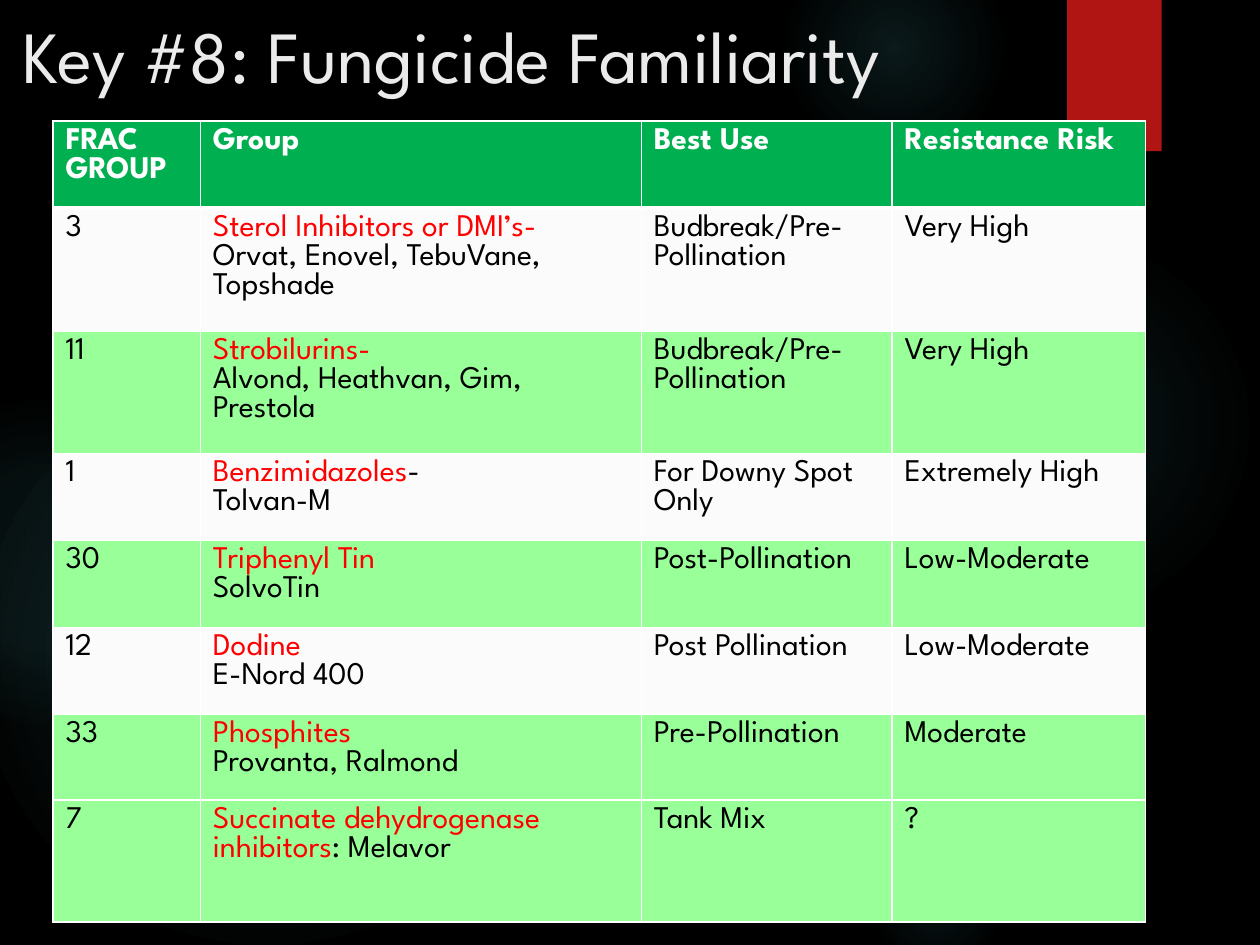
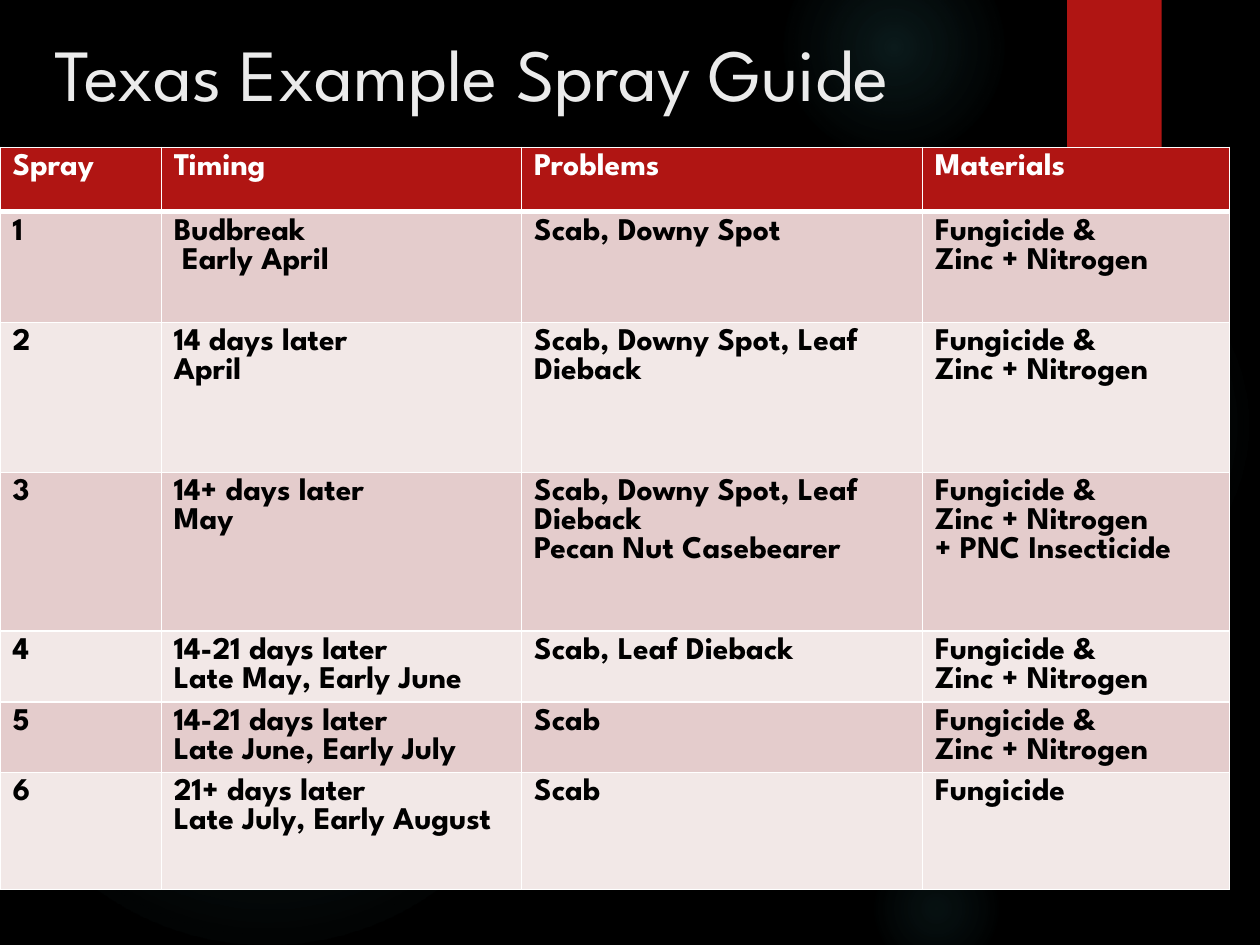
from lxml import etree
from pptx import Presentation
from pptx.dml.color import RGBColor
from pptx.enum.shapes import MSO_SHAPE as Preset
from pptx.enum.text import MSO_ANCHOR as Anchor, PP_ALIGN as Align
from pptx.oxml import parse_xml
from pptx.oxml.ns import nsdecls, qn
from pptx.util import Inches, Pt

# Shared style
FONT = "League Spartan"
TITLE_SIZE, CELL_SIZE = 42, 18
THIN, THICK = 1, 3
TITLE_ONLY = 5
BLACK = RGBColor(0x00, 0x00, 0x00)
WHITE = RGBColor(0xFF, 0xFF, 0xFF)
TITLE_GREY = RGBColor(0xEB, 0xEB, 0xEB)
BAND_RED = RGBColor(0xB0, 0x15, 0x13)
GROUP_RED = RGBColor(0xFF, 0x00, 0x00)
GLOW_TEAL = RGBColor(0x50, 0xB9, 0xC1)
HEADER_GREEN = RGBColor(0x00, 0xB0, 0x50)
ROW_GREEN = RGBColor(0x99, 0xFF, 0x99)
ROW_WHITE = RGBColor(0xFB, 0xFB, 0xFB)
ROW_ROSE = RGBColor(0xE4, 0xCC, 0xCC)
ROW_PINK = RGBColor(0xF2, 0xE8, 0xE7)

# Background glows: left, top, diameter, then (position %, opacity %) stops
GLOWS = [
    (6.89, 1.83, 3.08, [(0, 7), (36, 6), (69, 0)]),
    (6.22, -0.5, 1.75, [(0, 14), (36, 7), (73, 0)]),
    (6.89, 6.67, 1.08, [(0, 9), (36, 5), (66, 0)]),
    (-0.17, 2.92, 4.58, [(0, 11), (36, 10), (75, 0)]),
    (-0.92, 3.17, 2.58, [(0, 8), (36, 8), (72, 0)]),
]
BAND_BOX = (8.47, 0, 0.75, 1.2)

# Table rows: height, fill, cell texts. In a text, a line break starts a
# paragraph, and a bar ends the red group name that opens it.
FUNGICIDE_ROWS = [
    (0.69, HEADER_GREEN, ["FRAC GROUP", "Group", "Best Use", "Resistance Risk"]),
    (0.98, ROW_WHITE, ["3", "Sterol Inhibitors or DMI’s-|\nOrvat, Enovel, TebuVane, Topshade",
                       "Budbreak/Pre-Pollination", "Very High"]),
    (0.97, ROW_GREEN, ["11", "Strobilurins-|\nAlvond, Heathvan, Gim, Prestola",
                       "Budbreak/Pre-Pollination", "Very High"]),
    (0.69, ROW_WHITE, ["1", "Benzimidazoles|-\nTolvan-M",
                       "For Downy Spot Only", "Extremely High"]),
    (0.69, ROW_GREEN, ["30", "Triphenyl Tin|\nSolvoTin",
                       "Post-Pollination", "Low-Moderate"]),
    (0.69, ROW_WHITE, ["12", "Dodine|\nE-Nord 400",
                       "Post Pollination", "Low-Moderate"]),
    (0.68, ROW_GREEN, ["33", "Phosphites|\nProvanta, Ralmond",
                       "Pre-Pollination", "Moderate"]),
    (0.97, ROW_GREEN, ["7", "Succinate dehydrogenase inhibitors|: Melavor",
                       "Tank Mix", "?"]),
]
FEED = "Fungicide &\nZinc + Nitrogen"
SPRAY_ROWS = [
    (0.51, BAND_RED, ["Spray", "Timing", "Problems", "Materials"]),
    (0.88, ROW_ROSE, ["1", "Budbreak\n Early April", "Scab, Downy Spot", FEED]),
    (1.19, ROW_PINK, ["2", "14 days later\nApril",
                      "Scab, Downy Spot, Leaf Dieback", FEED]),
    (1.26, ROW_ROSE, ["3", "14+ days later\nMay",
                      "Scab, Downy Spot, Leaf Dieback\nPecan Nut Casebearer",
                      FEED + "\n+ PNC Insecticide"]),
    (0.56, ROW_PINK, ["4", "14-21 days later\nLate May, Early June",
                      "Scab, Leaf Dieback", FEED]),
    (0.56, ROW_ROSE, ["5", "14-21 days later\nLate June, Early July", "Scab", FEED]),
    (0.93, ROW_PINK, ["6", "21+ days later\nLate July, Early August",
                      "Scab", "Fungicide"]),
]


def inches(box):
    return [Inches(length) for length in box]


def paint(fill, color):
    fill.solid()
    fill.fore_color.rgb = color


def style_run(run, size, color, bold=False):
    run.font.name = FONT
    run.font.size = Pt(size)
    run.font.color.rgb = color
    run.font.bold = bold


# Backdrop
def add_plain_shape(slide, preset, box):
    shape = slide.shapes.add_shape(preset, *inches(box))
    shape.shadow.inherit = False
    shape.line.fill.background()
    return shape


def add_glow(slide, box, stops):
    glow = add_plain_shape(slide, Preset.OVAL, box)
    stop_xml = "".join(
        f'<a:gs pos="{position * 1000}"><a:srgbClr val="{GLOW_TEAL}">'
        f'<a:alpha val="{opacity * 1000}"/></a:srgbClr></a:gs>'
        for position, opacity in stops + [(100, 0)])
    gradient = parse_xml(
        f'<a:gradFill {nsdecls("a")} rotWithShape="1"><a:gsLst>{stop_xml}</a:gsLst>'
        '<a:path path="circle"><a:fillToRect l="50000" t="50000" r="50000" b="50000"/>'
        '</a:path></a:gradFill>')
    glow.element.spPr.find(qn("a:prstGeom")).addnext(gradient)


def add_backdrop(slide):
    paint(slide.background.fill, BLACK)
    for left, top, diameter, stops in GLOWS:
        add_glow(slide, (left, top, diameter, diameter), stops)
    band = add_plain_shape(slide, Preset.RECTANGLE, BAND_BOX)
    paint(band.fill, BAND_RED)


# Title
def set_title(slide, text, box, anchor):
    title = slide.shapes.title
    title.left, title.top, title.width, title.height = inches(box)
    frame = title.text_frame
    frame.text = text
    frame.vertical_anchor = anchor
    heading = frame.paragraphs[0]
    heading.alignment = Align.LEFT
    style_run(heading.runs[0], TITLE_SIZE, TITLE_GREY)
    # Bring the title in front of the backdrop
    title.element.getparent().append(title.element)


# Table
def write_cell(cell, text, color, bold):
    lines = text.split("\n")
    cell.text_frame.text = text.replace("|", "")
    for paragraph, line in zip(cell.text_frame.paragraphs, lines):
        group, bar, rest = line.partition("|")
        first_run = paragraph.runs[0]
        first_run.text = group
        style_run(first_run, CELL_SIZE, GROUP_RED if bar else color, bold)
        if rest:
            rest_run = paragraph.add_run()
            rest_run.text = rest
            style_run(rest_run, CELL_SIZE, color, bold)


def set_borders(cell, top, bottom):
    properties = cell._tc.get_or_add_tcPr()
    sides = [("lnL", THIN), ("lnR", THIN), ("lnT", top), ("lnB", bottom)]
    for position, (side, width) in enumerate(sides):
        line = etree.Element(qn(f"a:{side}"), w=str(Pt(width)))
        solid = etree.SubElement(line, qn("a:solidFill"))
        etree.SubElement(solid, qn("a:srgbClr"), val=str(WHITE))
        properties.insert(position, line)


def add_grid(slide, left, top, widths, rows, bold_body):
    box = (left, top, sum(widths), sum(height for height, _, _ in rows))
    table = slide.shapes.add_table(len(rows), len(widths), *inches(box)).table
    for column, width in zip(table.columns, widths):
        column.width = Inches(width)
    for index, (height, fill, texts) in enumerate(rows):
        row = table.rows[index]
        row.height = Inches(height)
        is_header = index == 0
        # The header and the first body row share the thick rule
        top_rule = THICK if index == 1 else THIN
        bottom_rule = THICK if is_header else THIN
        for cell, text in zip(row.cells, texts):
            paint(cell.fill, fill)
            write_cell(cell, text, WHITE if is_header else BLACK,
                       is_header or bold_body)
            set_borders(cell, top_rule, bottom_rule)


# Slides
def start_slide(deck, title, title_box, anchor):
    slide = deck.slides.add_slide(deck.slide_layouts[TITLE_ONLY])
    add_backdrop(slide)
    set_title(slide, title, title_box, anchor)
    return slide


def add_fungicide_slide(deck):
    slide = start_slide(deck, "Key #8: Fungicide Familiarity",
                        (0.08, 0.06, 10.08, 0.77), Anchor.BOTTOM)
    add_grid(slide, 0.42, 0.96, [1.17, 3.5, 1.99, 2.01], FUNGICIDE_ROWS,
             bold_body=False)


def add_spray_slide(deck):
    slide = start_slide(deck, "Texas Example Spray Guide",
                        (0.33, 0.11, 9.5, 0.92), Anchor.MIDDLE)
    add_grid(slide, 0, 1.17, [1.28, 2.86, 3.18, 2.44], SPRAY_ROWS,
             bold_body=True)


def main():
    deck = Presentation()
    deck.slide_width, deck.slide_height = Inches(10), Inches(7.5)
    add_fungicide_slide(deck)
    add_spray_slide(deck)
    deck.save("out.pptx")


if __name__ == "__main__":
    main()
